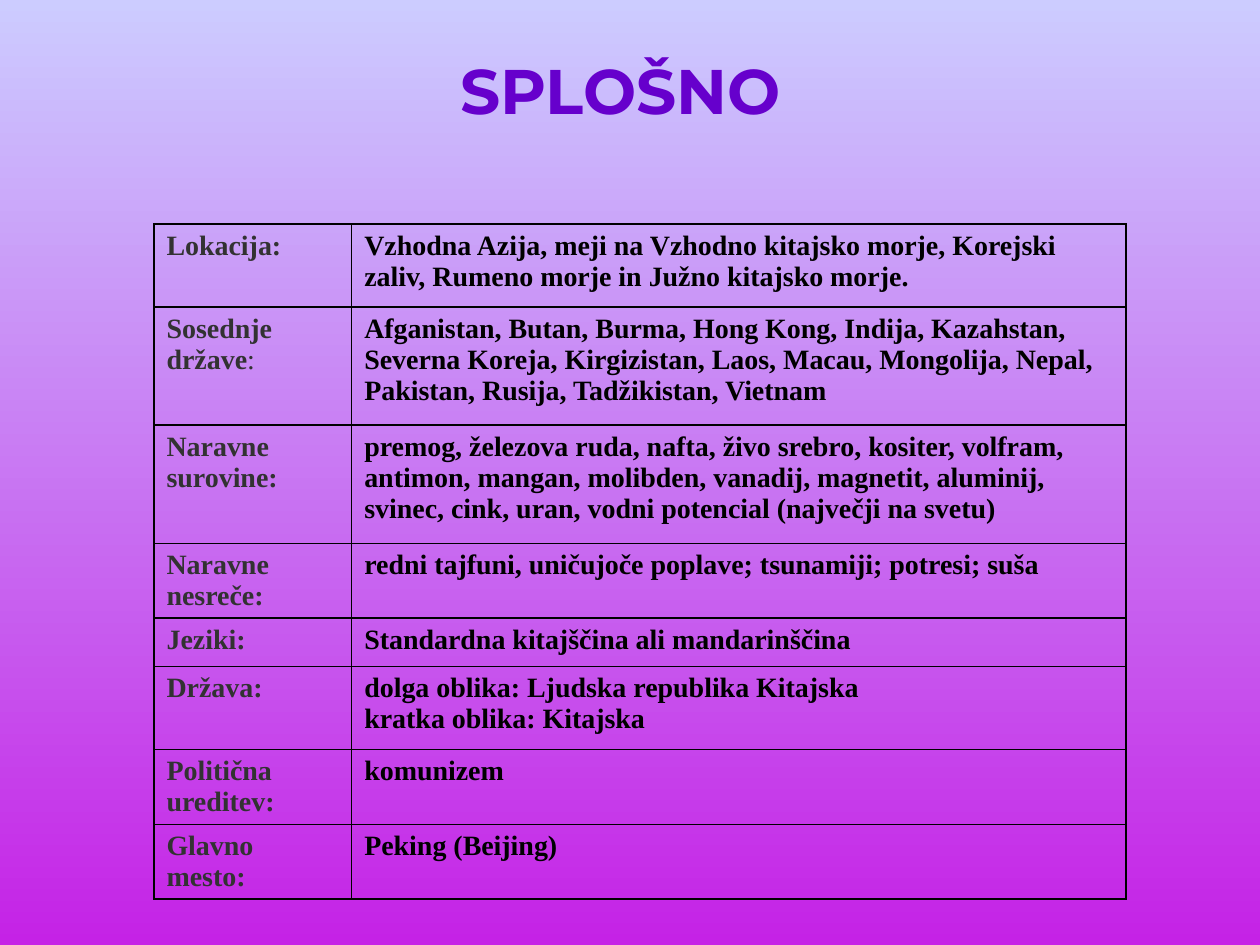
from dataclasses import dataclass

from lxml import etree
from pptx import Presentation
from pptx.dml.color import RGBColor
from pptx.dml.fill import FillFormat
from pptx.enum import text
from pptx.oxml import ns
from pptx.slide import Slide
from pptx.table import Table, _Cell
from pptx.util import Pt

TABLE_FONT = "Times New Roman"
LABEL_COLOR = "323232"
BODY_COLOR = "000000"
COLUMN_WIDTHS = (113, 442.5)


@dataclass
class Fact:
    label: str
    lines: tuple[str, ...]
    height: float
    plain_suffix: str = ""


FACTS = [
    Fact("Lokacija:", ("Vzhodna Azija, meji na Vzhodno kitajsko morje, Korejski zaliv, "
                       "Rumeno morje in Južno kitajsko morje.",), 47.5),
    Fact("Sosednje države", ("Afganistan, Butan, Burma, Hong Kong, Indija, Kazahstan, "
                             "Severna Koreja, Kirgizistan, Laos, Macau, Mongolija, Nepal, "
                             "Pakistan, Rusija, Tadžikistan, Vietnam",), 67.5, ":"),
    Fact("Naravne surovine:", ("premog, železova ruda, nafta, živo srebro, kositer, volfram, "
                               "antimon, mangan, molibden, vanadij, magnetit, aluminij, "
                               "svinec, cink, uran, vodni potencial (največji na svetu)",), 67.5),
    Fact("Naravne nesreče:", ("redni tajfuni, uničujoče poplave; tsunamiji; potresi; suša",), 42.8),
    Fact("Jeziki:", ("Standardna kitajščina ali mandarinščina",), 27.5),
    Fact("Država:", ("dolga oblika: Ljudska republika Kitajska",
                     "kratka oblika: Kitajska"), 47.5),
    Fact("Politična ureditev:", ("komunizem",), 42.8),
    Fact("Glavno mesto:", ("Peking (Beijing)",), 27.5),
]


def color(value: str) -> RGBColor:
    return RGBColor.from_string(value)


def fill_downward(fill: FillFormat, top: str, bottom: str) -> None:
    """Apply a two-colour gradient running from top to bottom."""
    fill.gradient()
    fill.gradient_angle = 270
    for stop, value, position in zip(fill.gradient_stops, (top, bottom), (0, 1)):
        stop.color.rgb = color(value)
        stop.position = position


def add_title(slide: Slide, title: str) -> None:
    shape = slide.shapes.title
    shape.left, shape.top, shape.width, shape.height = Pt(235.5), Pt(26), Pt(238), Pt(85)
    frame = shape.text_frame
    frame.word_wrap = False
    frame.auto_size = text.MSO_AUTO_SIZE.NONE
    frame.vertical_anchor = text.MSO_ANCHOR.TOP
    paragraph = frame.paragraphs[0]
    paragraph.alignment = text.PP_ALIGN.CENTER
    run = paragraph.add_run()
    run.text = title
    run.font.name = "Montserrat"
    run.font.size = Pt(36)
    run.font.bold = True
    fill_downward(run.font.fill, "6600CC", "CC00CC")


def add_cell_run(cell: _Cell, content: str, hex_color: str, bold: bool = True) -> None:
    run = cell.text_frame.paragraphs[0].add_run()
    run.text = content
    run.font.name = TABLE_FONT
    run.font.size = Pt(16)
    run.font.bold = bold
    run.font.color.rgb = color(hex_color)


def format_cell(cell: _Cell) -> None:
    """Clear the fill and draw a black border on every side."""
    properties = cell._tc.get_or_add_tcPr()
    for side in ("lnL", "lnR", "lnT", "lnB"):
        line = etree.SubElement(properties, ns.qn(f"a:{side}"), w=str(Pt(1)))
        fill = etree.SubElement(line, ns.qn("a:solidFill"))
        etree.SubElement(fill, ns.qn("a:srgbClr"), val="000000")
    cell.fill.background()


def fill_row(table: Table, index: int, fact: Fact) -> None:
    table.rows[index].height = Pt(fact.height)
    label, body = table.cell(index, 0), table.cell(index, 1)
    add_cell_run(label, fact.label, LABEL_COLOR)
    if fact.plain_suffix:
        add_cell_run(label, fact.plain_suffix, LABEL_COLOR, bold=False)
    for number, line in enumerate(fact.lines):
        if number:
            body.text_frame.paragraphs[0].add_line_break()
        add_cell_run(body, line, BODY_COLOR)
    for cell in (label, body):
        format_cell(cell)


def add_fact_table(slide: Slide, facts: list[Fact]) -> None:
    height = sum(fact.height for fact in facts)
    table = slide.shapes.add_table(len(facts), len(COLUMN_WIDTHS), Pt(88), Pt(128),
                                   Pt(sum(COLUMN_WIDTHS)), Pt(height)).table
    table.first_row = False
    table.horz_banding = False
    for column, width in zip(table.columns, COLUMN_WIDTHS):
        column.width = Pt(width)
    for index, fact in enumerate(facts):
        fill_row(table, index, fact)


def main() -> None:
    presentation = Presentation()
    presentation.slide_width, presentation.slide_height = Pt(720), Pt(540)
    slide = presentation.slides.add_slide(presentation.slide_layouts.get_by_name("Title Only"))
    fill_downward(slide.background.fill, "CCCCFF", "C522E6")
    add_title(slide, "SPLOŠNO")
    add_fact_table(slide, FACTS)
    presentation.save("out.pptx")


if __name__ == "__main__":
    main()
